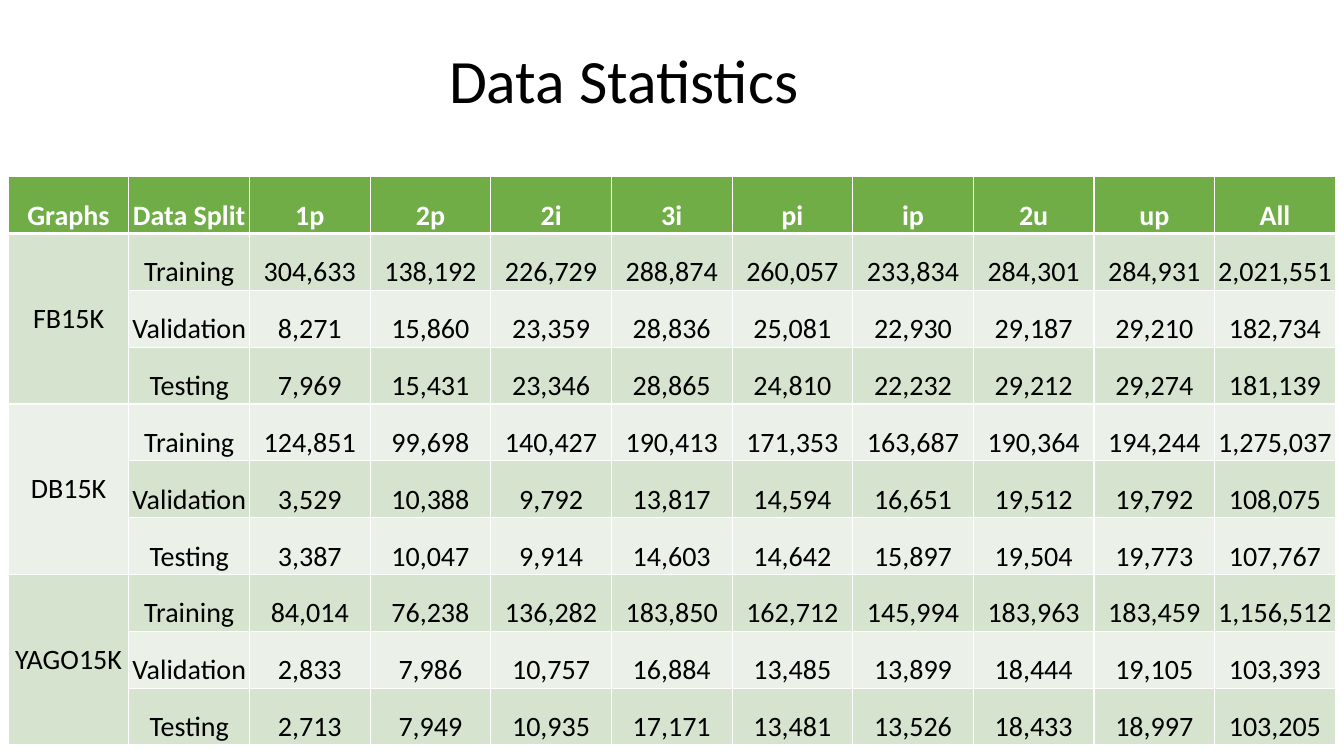
from dataclasses import dataclass

from lxml import etree
from pptx import Presentation
from pptx.dml.color import RGBColor
from pptx.enum import text
from pptx.oxml import ns
from pptx.util import Pt


@dataclass(frozen=True)
class Theme:
    font: str = "Calibri"
    title_size: float = 44
    table_size: float = 20
    ink: str = "000000"
    white: str = "FFFFFF"
    header: str = "70AD47"
    bands: tuple = ("D5E3CF", "EBF1E9")
    thin: float = 1
    thick: float = 3


THEME = Theme()
HEADINGS = "Graphs|Data Split|1p|2p|2i|3i|pi|ip|2u|up|All".split("|")
SPLITS = ("Training", "Validation", "Testing")
GRAPHS = {
    "FB15K": (
        "304,633 138,192 226,729 288,874 260,057 233,834 284,301 284,931 2,021,551",
        "8,271 15,860 23,359 28,836 25,081 22,930 29,187 29,210 182,734",
        "7,969 15,431 23,346 28,865 24,810 22,232 29,212 29,274 181,139",
    ),
    "DB15K": (
        "124,851 99,698 140,427 190,413 171,353 163,687 190,364 194,244 1,275,037",
        "3,529 10,388 9,792 13,817 14,594 16,651 19,512 19,792 108,075",
        "3,387 10,047 9,914 14,603 14,642 15,897 19,504 19,773 107,767",
    ),
    "YAGO15K": (
        "84,014 76,238 136,282 183,850 162,712 145,994 183,963 183,459 1,156,512",
        "2,833 7,986 10,757 16,884 13,485 13,899 18,444 19,105 103,393",
        "2,713 7,949 10,935 17,171 13,481 13,526 18,433 18,997 103,205",
    ),
}


def set_attributes(target, values):
    for name, value in values.items():
        setattr(target, name, value)


def write(tf, words, size, color, bold=False):
    """Put one centred paragraph in a text frame."""
    p = tf.paragraphs[0]
    p.alignment = text.PP_ALIGN.CENTER
    r = p.add_run()
    r.text = words
    set_attributes(r.font, {"name": THEME.font, "size": Pt(size), "bold": bold})
    r.font.color.rgb = RGBColor.from_string(color)
    return p


def add_title(s, words):
    sp = s.shapes.add_textbox(Pt(31.7), Pt(6.5), Pt(828), Pt(80.6))
    tf = sp.text_frame
    set_attributes(tf, {"word_wrap": True, "vertical_anchor": text.MSO_ANCHOR.BOTTOM})
    write(tf, words, THEME.title_size, THEME.ink).line_spacing = 0.9


def set_borders(cell, top, bottom):
    """Draw white edges; widths of the top and bottom edges are in points."""
    tc_pr = cell._tc.get_or_add_tcPr()
    widths = {"lnL": THEME.thin, "lnR": THEME.thin, "lnT": top, "lnB": bottom}
    for place, (tag, width) in enumerate(widths.items()):
        line = etree.Element(ns.qn(f"a:{tag}"), w=str(Pt(width)))
        fill = etree.SubElement(line, ns.qn("a:solidFill"))
        etree.SubElement(fill, ns.qn("a:srgbClr"), val=THEME.white)
        tc_pr.insert(place, line)


def style_cell(cell, row, anchor):
    set_attributes(cell, {
        "margin_left": Pt(1.2), "margin_right": Pt(1.2),
        "margin_top": Pt(0.6), "margin_bottom": Pt(0.6),
        "vertical_anchor": anchor,
    })
    cell.fill.solid()
    color = THEME.bands[(row - 1) % 2] if row else THEME.header
    cell.fill.fore_color.rgb = RGBColor.from_string(color)
    set_borders(cell,
                top=THEME.thick if row == 1 else THEME.thin,
                bottom=THEME.thick if row == 0 else THEME.thin)


def statistics_rows():
    """List the table rows, naming each graph only in its first row."""
    rows = [HEADINGS]
    for graph, counts in GRAPHS.items():
        for i, (split, values) in enumerate(zip(SPLITS, counts)):
            rows.append(["" if i else graph, split, *values.split()])
    return rows


def add_statistics(s, rows):
    frame = s.shapes.add_table(len(rows), len(HEADINGS), Pt(5.9), Pt(126.2),
                               Pt(948.2), Pt(406))
    table = frame.table
    for column in table.columns:
        column.width = Pt(86.2)
    for i, row in enumerate(rows):
        table.rows[i].height = Pt(40.6)
        for j, words in enumerate(row):
            cell = table.cell(i, j)
            is_graph = i > 0 and j == 0
            style_cell(cell, i, text.MSO_ANCHOR.MIDDLE if is_graph
                       else text.MSO_ANCHOR.BOTTOM)
            if words:
                write(cell.text_frame, words, THEME.table_size,
                      THEME.ink if i else THEME.white, bold=i == 0)
    for first in range(1, len(rows), len(SPLITS)):
        table.cell(first, 0).merge(table.cell(first + len(SPLITS) - 1, 0))


def main():
    prs = Presentation()
    set_attributes(prs, {"slide_width": Pt(960), "slide_height": Pt(540)})
    s = prs.slides.add_slide(prs.slide_layouts[6])
    add_statistics(s, statistics_rows())
    add_title(s, "Data Statistics")
    prs.save("out.pptx")


if __name__ == "__main__":
    main()
